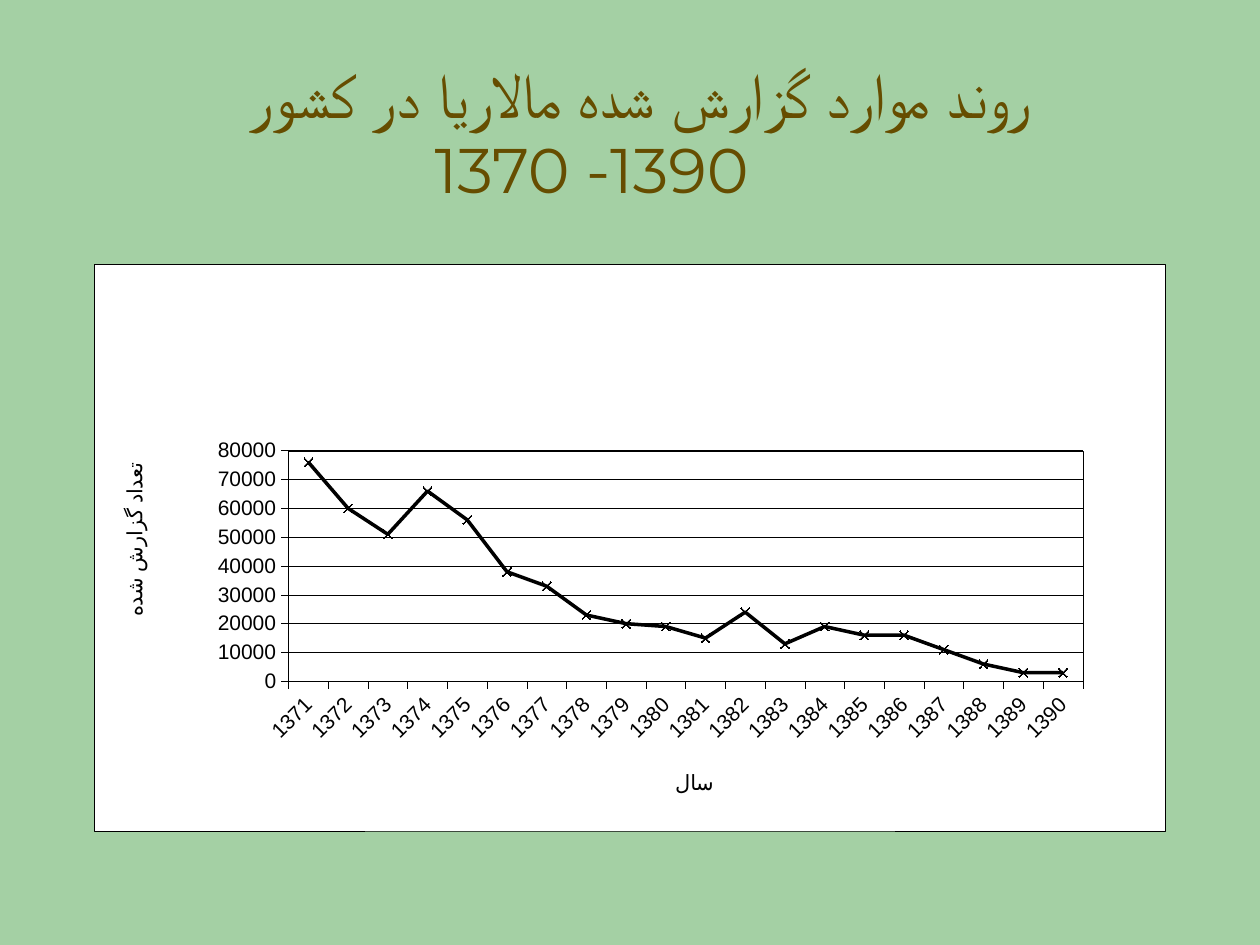
from lxml import etree
from pptx import Presentation
from pptx.chart.data import CategoryChartData
from pptx.dml.color import RGBColor
from pptx.enum.chart import XL_CHART_TYPE as ChartType, XL_MARKER_STYLE as MarkerStyle
from pptx.enum.chart import XL_TICK_MARK as TickMark
from pptx.enum.text import MSO_ANCHOR as Anchor, PP_ALIGN as Align
from pptx.oxml import parse_xml
from pptx.oxml.ns import nsdecls, qn
from pptx.util import Pt

COLORS = {"background": "A4D0A4", "title": "664D00", "ink": "000000", "paper": "FFFFFF"}
COLORS = {name: RGBColor.from_string(value) for name, value in COLORS.items()}
CHART_FONT = {"size": Pt(12), "name": "Arial", "bold": False}
HAIRLINE = Pt(0.25)
CHART_WIDTH, CHART_HEIGHT = Pt(612), Pt(324)


def set_layout(element, target=None, **places):
    """Place a chart part by lengths measured from the chart's corner."""
    for old in element.findall(qn("c:layout")):
        element.remove(old)
    layout = etree.Element(qn("c:layout"))
    manual = etree.SubElement(layout, qn("c:manualLayout"))
    if target:
        etree.SubElement(manual, qn("c:layoutTarget")).set("val", target)
    for mode in ("xMode", "yMode"):
        etree.SubElement(manual, qn(f"c:{mode}")).set("val", "edge")
    for name, length in places.items():
        whole = CHART_WIDTH if name in "xw" else CHART_HEIGHT
        etree.SubElement(manual, qn(f"c:{name}")).set("val", str(length / whole))
    element.insert(0 if element.find(qn("c:tx")) is None else 1, layout)


def outline(fill):
    """Return shape properties with a thin black border and the given fill."""
    return parse_xml(
        f'<c:spPr {nsdecls("c", "a")}>{fill}<a:ln w="{HAIRLINE}"><a:solidFill>'
        f'<a:srgbClr val="{COLORS["ink"]}"/></a:solidFill></a:ln></c:spPr>')


presentation = Presentation()
presentation.slide_width, presentation.slide_height = Pt(720), Pt(540)
slide = presentation.slides.add_slide(presentation.slide_layouts[5])
slide.background.fill.solid()
slide.background.fill.fore_color.rgb = COLORS["background"]

# Title, set from right to left, with the years moved a little to the left
title = slide.shapes.title
title.left, title.top, title.width, title.height = Pt(60), Pt(31.5), Pt(612), Pt(90)
title_frame = title.text_frame
title_frame.vertical_anchor = Anchor.BOTTOM
title_frame.word_wrap = True
title_frame.text = "روند موارد گزارش شده مالاریا در کشور\n1390- 1370"
for paragraph, indent in zip(title_frame.paragraphs, (0, 56)):
    paragraph.alignment = Align.CENTER
    paragraph.space_before = Pt(0)
    properties = paragraph._p.get_or_add_pPr()
    for name, value in {"rtl": "1", "marL": str(Pt(indent)), "indent": "0"}.items():
        properties.set(name, value)
    font = paragraph.runs[0].font
    for name, value in {"size": Pt(36), "name": "Montserrat", "bold": False}.items():
        setattr(font, name, value)
    font.color.rgb = COLORS["title"]
    etree.SubElement(font._element, qn("a:cs")).set("typeface", "Montserrat")

# Chart of reported cases by year
cases = [76000, 60000, 51000, 66000, 56000, 38000, 33000, 23000, 20000, 19000,
         15000, 24000, 13000, 19000, 16000, 16000, 11000, 6000, 3000, 3000]
chart_data = CategoryChartData(number_format="General")
chart_data.categories = [str(year) for year in range(1371, 1391)]
chart_data.add_series("Series 1", cases)
chart = slide.shapes.add_chart(
    ChartType.LINE_MARKERS, Pt(54), Pt(151), CHART_WIDTH, CHART_HEIGHT, chart_data).chart
chart.has_title = False
chart.has_legend = False
for name, value in CHART_FONT.items():
    setattr(chart.font, name, value)
chart.font.color.rgb = COLORS["ink"]

# Chart frame and plot area
chart_element = chart.element.find(qn("c:chart"))
chart_element.addnext(outline(
    f'<a:solidFill><a:srgbClr val="{COLORS["paper"]}"/></a:solidFill>'))
plot_area = chart_element.find(qn("c:plotArea"))
plot_area.append(outline("<a:noFill/>"))
set_layout(plot_area, "inner", x=Pt(110.8), y=Pt(106.6), w=Pt(454.1), h=Pt(131.9))

# Axes: title, its place and turn, and the turn of the labels (in degrees)
axes = [
    (chart.category_axis, "سال", 329.3, 287.6, 0, -45),
    (chart.value_axis, "تعداد گزارش شده", 13.8, 111.2, -90, 0),
]
for axis, caption, x, y, title_turn, label_turn in axes:
    axis.major_tick_mark = TickMark.OUTSIDE
    axis.minor_tick_mark = TickMark.NONE
    axis.format.line.width = HAIRLINE
    axis.format.line.color.rgb = COLORS["ink"]
    frame = axis.axis_title.text_frame
    frame.text = caption
    for font in (frame.paragraphs[0].runs[0].font, axis.tick_labels.font):
        for name, value in CHART_FONT.items():
            setattr(font, name, value)
        font.color.rgb = COLORS["ink"]
    set_layout(axis.axis_title.element, x=Pt(x), y=Pt(y))
    label_text = axis._element.find(qn("c:txPr"))
    for text, turn in ((frame._txBody, title_turn), (label_text, label_turn)):
        text.find(qn("a:bodyPr")).set("rot", str(turn * 60000))

chart.category_axis.has_major_gridlines = False
value_axis = chart.value_axis
for name, value in {"minimum_scale": 0, "maximum_scale": 80000, "major_unit": 10000,
                    "has_major_gridlines": True}.items():
    setattr(value_axis, name, value)
value_axis.major_gridlines.format.line.width = HAIRLINE
value_axis.major_gridlines.format.line.color.rgb = COLORS["ink"]

# Line and markers
chart.plots[0].vary_by_categories = False
series = chart.plots[0].series[0]
series.smooth = False
series.format.line.width = Pt(2)
series.format.line.color.rgb = COLORS["ink"]
series.marker.style = MarkerStyle.X
series.marker.size = 5
series.marker.format.fill.solid()
series.marker.format.fill.fore_color.rgb = COLORS["ink"]
series.marker.format.line.color.rgb = COLORS["ink"]

presentation.save("out.pptx")
